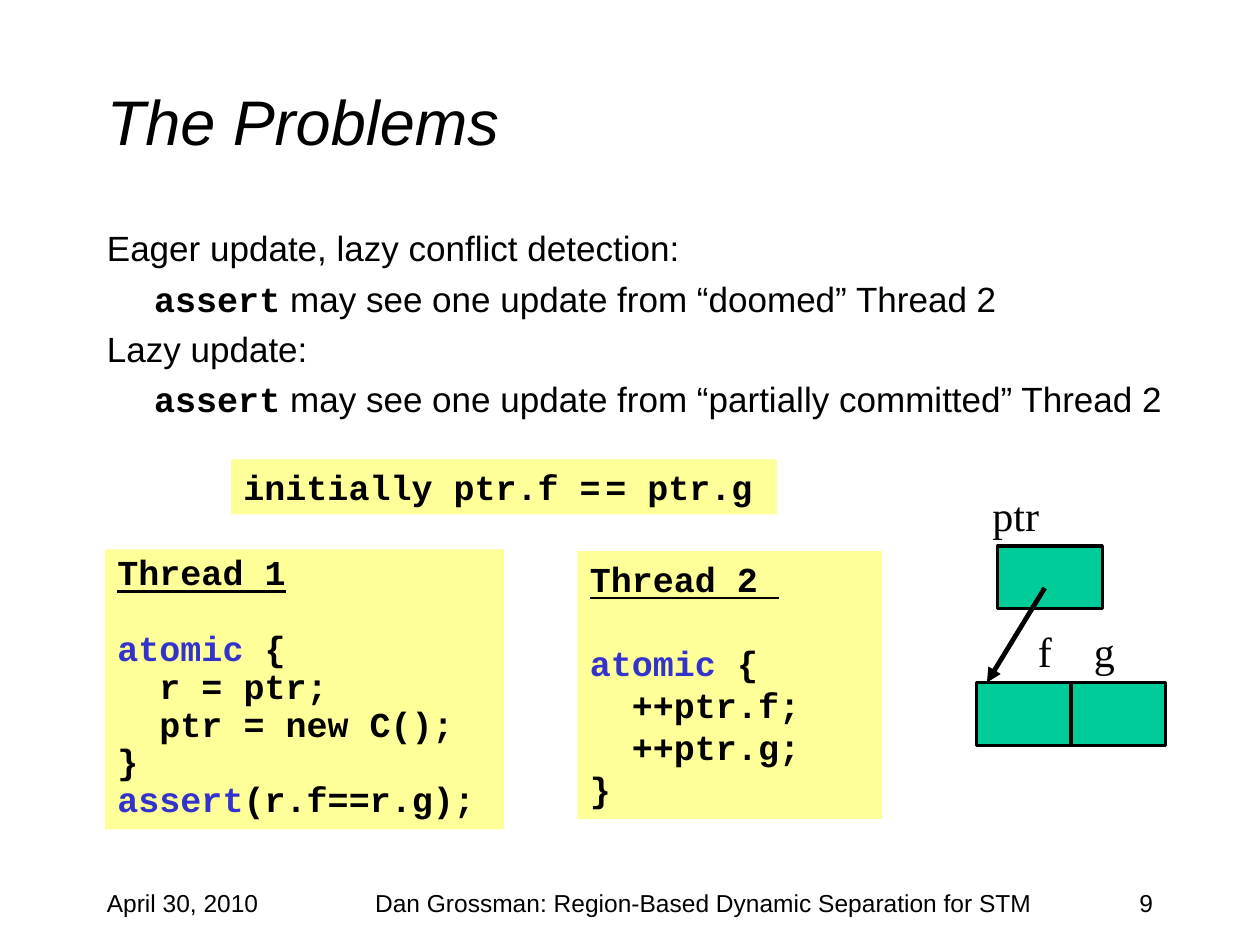
import pptx
import pptx.dml.color
import pptx.enum.shapes
import pptx.enum.text
import pptx.oxml.ns
import pptx.util
from lxml import etree

Pt = pptx.util.Pt
RGBColor = pptx.dml.color.RGBColor
ALIGN = pptx.enum.text.PP_ALIGN
ANCHOR = pptx.enum.text.MSO_ANCHOR
RECTANGLE = pptx.enum.shapes.MSO_SHAPE.RECTANGLE

BLACK = RGBColor(0x00, 0x00, 0x00)
KEYWORD_BLUE = RGBColor(0x33, 0x33, 0xCC)
CODE_YELLOW = RGBColor(0xFF, 0xFF, 0x99)
CELL_GREEN = RGBColor(0x00, 0xCC, 0x99)

deck = pptx.Presentation()
deck.slide_width, deck.slide_height = Pt(720), Pt(540)
slide = deck.slides.add_slide(deck.slide_layouts[6])


def add_text(box, lines, size, font="Arial", align=ALIGN.LEFT, wrap=True, **common):
    """Fill box with lines; each line is a list of (text, font overrides) runs."""
    left, top, width, height = box
    frame = slide.shapes.add_textbox(Pt(left), Pt(top), Pt(width), Pt(height)).text_frame
    frame.word_wrap = wrap
    for index, line in enumerate(lines):
        paragraph = frame.add_paragraph() if index else frame.paragraphs[0]
        paragraph.alignment = align
        for text, overrides in line:
            run = paragraph.add_run()
            run.text = text
            run.font.color.rgb = BLACK
            style = {"size": Pt(size), "name": font} | common | overrides
            color = style.pop("color", BLACK)
            run.font.color.rgb = color
            for attribute, value in style.items():
                setattr(run.font, attribute, value)
    return frame


def add_rectangle(left, top, width, height, fill):
    rectangle = slide.shapes.add_shape(RECTANGLE, Pt(left), Pt(top), Pt(width), Pt(height))
    rectangle.shadow.inherit = False
    rectangle.fill.solid()
    rectangle.fill.fore_color.rgb = fill
    rectangle.line.fill.background()
    return rectangle


# Title and explanation
title = add_text((54, 24, 612, 90), [[("The Problems", {})]], 36, italic=True)
title.vertical_anchor = ANCHOR.MIDDLE

mono = {"name": "Courier New", "bold": True}
problems = [
    ("Eager update, lazy conflict detection:", "doomed"),
    ("Lazy update:", "partially committed"),
]
explanation = []
for strategy, state in problems:
    explanation.append([(strategy, {})])
    explanation.append([("assert", mono), (f" may see one update from “{state}” Thread 2", {})])
body = add_text((54, 126, 624, 120), explanation, 20)
for index, paragraph in enumerate(body.paragraphs):
    paragraph.space_before = Pt(4.8 if index else 0)
    if index % 2:
        paragraph._p.get_or_add_pPr().set("marL", str(Pt(27)))

# Footer
footer = [
    (54, 150, "April 30, 2010", ALIGN.LEFT),
    (192, 420, "Dan Grossman: Region-Based Dynamic Separation for STM", ALIGN.CENTER),
    (516, 150, "9", ALIGN.RIGHT),
]
for left, width, text, align in footer:
    add_text((left, 504, width, 36), [[(text, {})]], 14, align=align)

# Code panels
underlined = {"underline": True}
keyword = {"color": KEYWORD_BLUE}
atomic = [("atomic ", keyword), ("{", {})]
thread_1 = [
    [("Thread 1", underlined)],
    atomic,
    [("  r = ptr;", {})],
    [("  ptr = new C();", {})],
    [("}", {})],
    [("assert", keyword), ("(r.f==r.g);", {})],
]
thread_2 = [
    [("Thread 2 ", underlined)],
    atomic,
    [("  ++ptr.f;", {})],
    [("  ++ptr.g;", {})],
    [("}", {})],
]
initially = [[("initially ptr.f =", {}), (" ", {"size": Pt(4)}), ("= ptr.g", {})]]
panels = [
    ((60, 314, 228, 160), thread_1, 0.9),
    ((330, 315, 174, 153), thread_2, 1.0),
    ((132, 262.5, 312, 31.5), initially, 1.0),
]
for box, code, spacing in panels:
    add_rectangle(*box, CODE_YELLOW)
    panel = add_text(box, code, 20, **mono | {"font": "Courier New"})
    for paragraph in panel.paragraphs:
        paragraph.line_spacing = spacing
    if len(code) > 1:
        panel.paragraphs[1].space_before = Pt(24 * spacing)

# Pointer diagram
cells = [(570, 312, 60), (558, 390, 60), (612, 390, 54)]
for left, top, width in cells:
    cell = add_rectangle(left, top, width, 36, CELL_GREEN)
    cell.line.color.rgb = BLACK
    cell.line.width = Pt(1.75)

pointer = slide.shapes.add_connector(
    pptx.enum.shapes.MSO_CONNECTOR.STRAIGHT, Pt(597), Pt(336), Pt(564), Pt(390))
pointer.line.color.rgb = BLACK
pointer.line.width = Pt(2.75)
etree.SubElement(pointer.line._get_or_add_ln(), pptx.oxml.ns.qn("a:tailEnd"), type="triangle")
etree.SubElement(pointer._element.spPr, pptx.oxml.ns.qn("a:effectLst"))

labels = [("ptr", 560, 276, 42), ("f", 586, 354, 21), ("g", 618, 354, 28)]
for name, left, top, width in labels:
    add_text((left, top, width, 36), [[(name, {})]], 24, "Times New Roman", wrap=False)

deck.save("out.pptx")
